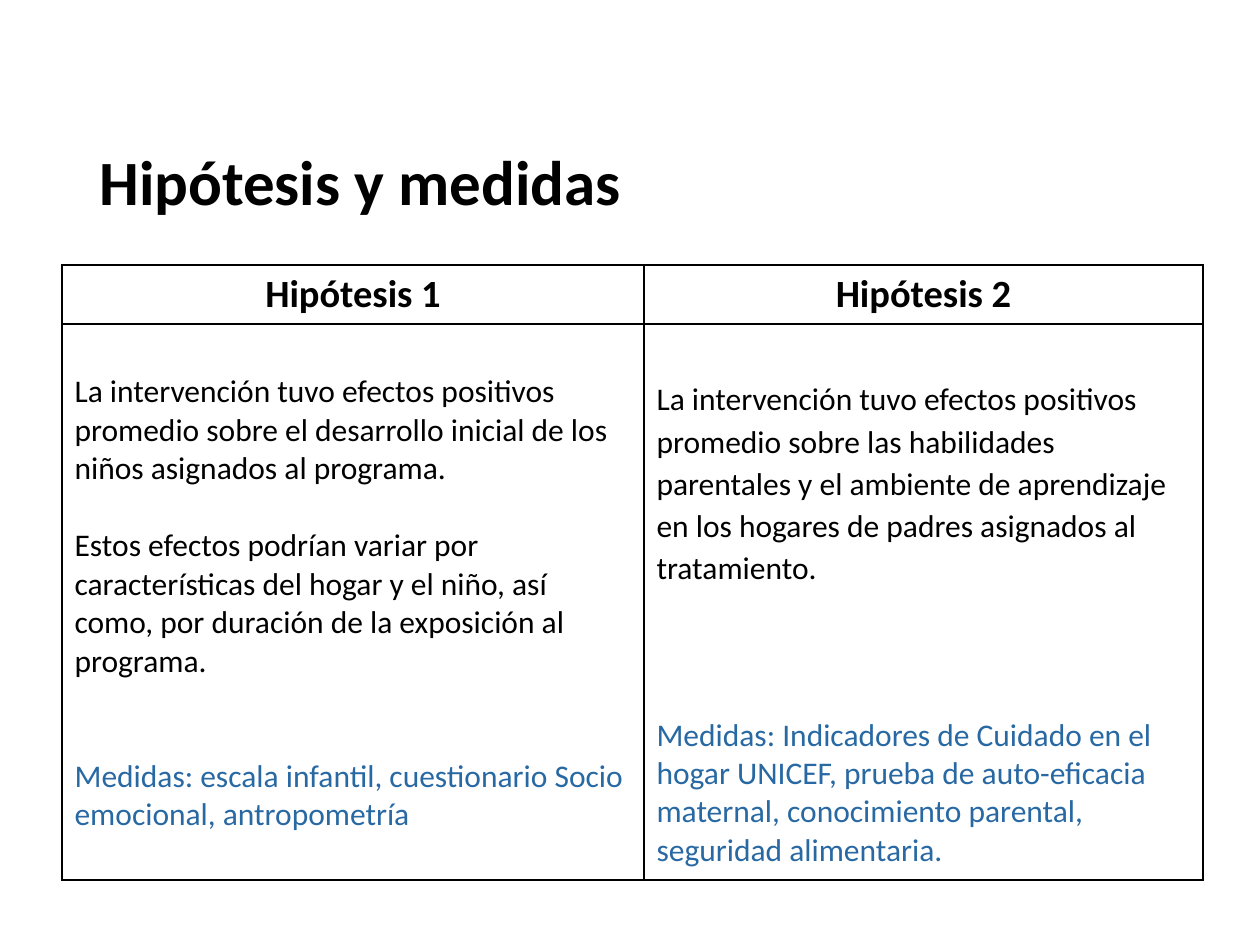
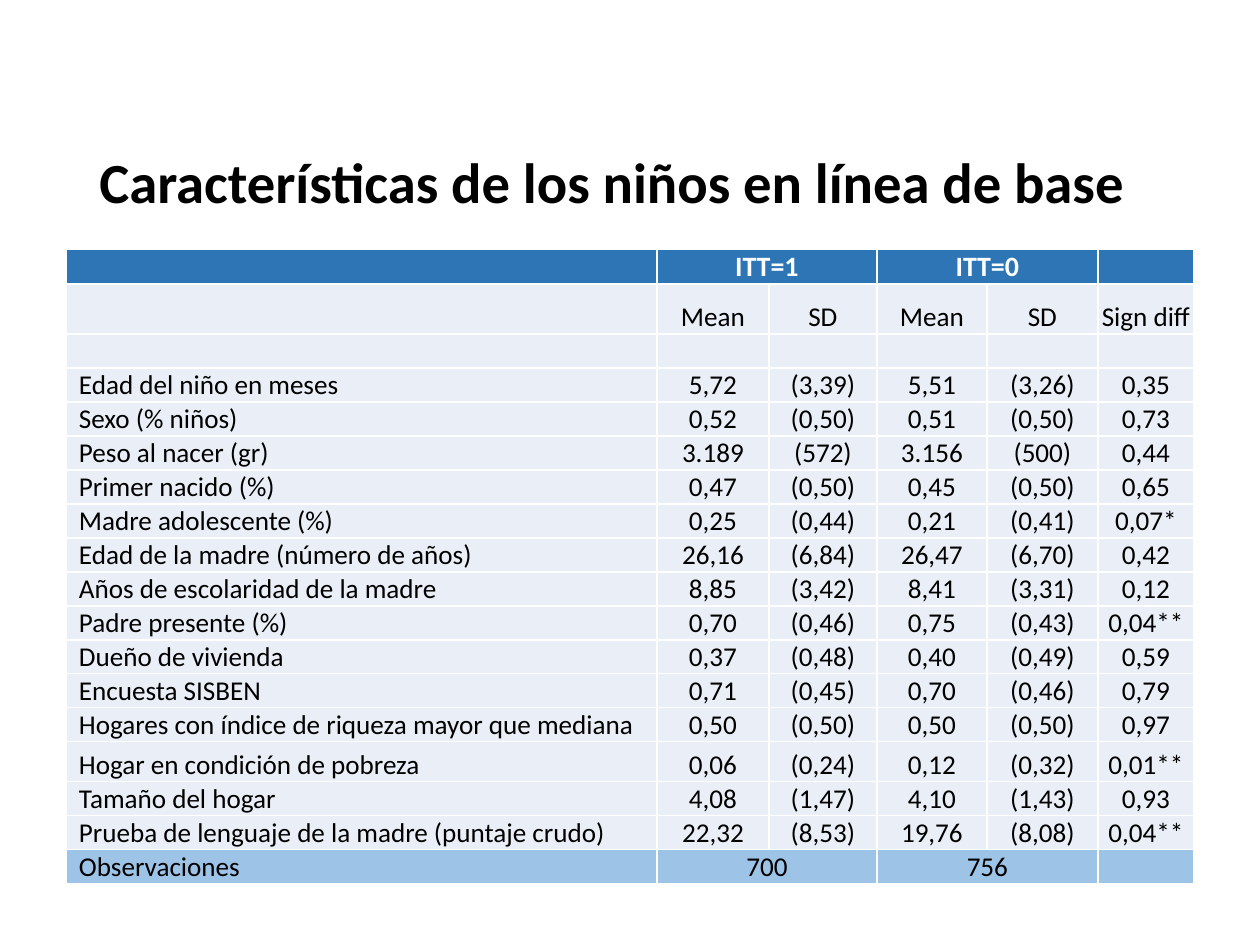
from pptx import Presentation
from pptx import util as u
from pptx.dml.color import RGBColor
from pptx.enum import text
from pptx.oxml.ns import qn
from lxml import etree

BLACK = RGBColor(0x00, 0x00, 0x00)
WHITE = RGBColor(0xFF, 0xFF, 0xFF)
MEASURE_BLUE = RGBColor(0x29, 0x69, 0xA3)
HEADER_BLUE = RGBColor(0x2E, 0x75, 0xB6)
BODY_BLUE = RGBColor(0xEA, 0xEF, 0xF7)
TOTAL_BLUE = RGBColor(0x9D, 0xC3, 0xE6)
FONT = "Calibri"
LEFT, CENTER = text.PP_ALIGN.LEFT, text.PP_ALIGN.CENTER

# Hypotheses: heading, top margin in px, then (text, space before, line spacing, colour)
HYPOTHESES = [
    ("Hipótesis 1", 49, [
        ("La intervención tuvo efectos positivos promedio sobre el desarrollo inicial "
         "de los niños asignados al programa.", 0, 1.0, BLACK),
        ("Estos efectos podrían variar por características del hogar y el niño, así como, "
         "por duración de la exposición al programa.", 22, 1.0, BLACK),
        ("Medidas: escala infantil, cuestionario Socio emocional, antropometría",
         44, 1.0, MEASURE_BLUE),
    ]),
    ("Hipótesis 2", 53, [
        ("La intervención tuvo efectos positivos promedio sobre las habilidades parentales "
         "y el ambiente de aprendizaje en los hogares de padres asignados al tratamiento.",
         0, 1.1, BLACK),
        ("Medidas: Indicadores de Cuidado en el hogar UNICEF, prueba de auto-eficacia "
         "maternal, conocimiento parental, seguridad alimentaria.", 73, 1.0, MEASURE_BLUE),
    ]),
]

# Baseline: label, mean and SD for each group, significance of the difference
BASELINE = [
    ("", "ITT=1", "", "ITT=0", "", ""),
    ("", "Mean", "SD", "Mean", "SD", "Sign diff"),
    ("", "", "", "", "", ""),
    ("Edad del niño en meses", "5,72", "(3,39)", "5,51", "(3,26)", "0,35"),
    ("Sexo (% niños)", "0,52", "(0,50)", "0,51", "(0,50)", "0,73"),
    ("Peso al nacer (gr)", "3.189", "(572)", "3.156", "(500)", "0,44"),
    ("Primer nacido (%)", "0,47", "(0,50)", "0,45", "(0,50)", "0,65"),
    ("Madre adolescente (%)", "0,25", "(0,44)", "0,21", "(0,41)", "0,07*"),
    ("Edad de la madre (número de años)", "26,16", "(6,84)", "26,47", "(6,70)", "0,42"),
    ("Años de escolaridad de la madre", "8,85", "(3,42)", "8,41", "(3,31)", "0,12"),
    ("Padre presente (%)", "0,70", "(0,46)", "0,75", "(0,43)", "0,04**"),
    ("Dueño de vivienda", "0,37", "(0,48)", "0,40", "(0,49)", "0,59"),
    ("Encuesta SISBEN", "0,71", "(0,45)", "0,70", "(0,46)", "0,79"),
    ("Hogares con índice de riqueza mayor que mediana",
     "0,50", "(0,50)", "0,50", "(0,50)", "0,97"),
    ("Hogar en condición de pobreza", "0,06", "(0,24)", "0,12", "(0,32)", "0,01**"),
    ("Tamaño del hogar", "4,08", "(1,47)", "4,10", "(1,43)", "0,93"),
    ("Prueba de lenguaje de la madre (puntaje crudo)",
     "22,32", "(8,53)", "19,76", "(8,08)", "0,04**"),
    ("Observaciones", "700", "", "756", "", ""),
]
LAST = len(BASELINE) - 1
TALL_ROWS = {0: 35, 1: 50, 14: 40}


def px(n):
    return u.Emu(round(n * 914400 / 126))


def style(paragraph, size, color, bold=False, align=LEFT, spacing=1.0, before=0):
    paragraph.alignment = align
    paragraph.line_spacing = spacing
    if before:
        paragraph.space_before = u.Pt(before)
    font = paragraph.font
    font.name, font.size, font.bold = FONT, u.Pt(size), bold
    font.color.rgb = color
    if not paragraph.runs:  # keeps empty cells as low as the filled ones
        paragraph._p.get_or_add_endParaRPr().set("sz", str(round(size * 100)))


def add_titled_slide(prs, title, size):
    slide = prs.slides.add_slide(prs.slide_layouts[6])
    frame = slide.shapes.add_textbox(px(87), px(137), px(1086), px(96)).text_frame
    frame.word_wrap = True
    frame.vertical_anchor = text.MSO_ANCHOR.MIDDLE
    frame.text = title
    style(frame.paragraphs[0], size, BLACK, True, spacing=0.9)
    return slide


def add_grid(slide, left, top, widths, heights, line_color):
    table = slide.shapes.add_table(len(heights), len(widths), px(left), px(top),
                                   px(sum(widths)), px(sum(heights))).table
    table.horz_banding = False
    for column, width in zip(table.columns, widths):
        column.width = px(width)
    for row, height in zip(table.rows, heights):
        row.height = px(height)
    for cell in table.iter_cells():
        properties = cell._tc.get_or_add_tcPr()
        for side in ("a:lnL", "a:lnR", "a:lnT", "a:lnB"):
            line = etree.SubElement(properties, qn(side), w=str(u.Pt(1)))
            fill = etree.SubElement(line, qn("a:solidFill"))
            etree.SubElement(fill, qn("a:srgbClr"), val=str(line_color))
    return table


def build_hypotheses(prs):
    slide = add_titled_slide(prs, "Hipótesis y medidas", 36)
    table = add_grid(slide, 62, 265, [582, 559], [59, 556], BLACK)
    for col, (heading, top_margin, statements) in enumerate(HYPOTHESES):
        head, body = table.cell(0, col), table.cell(1, col)
        head.fill.background()
        body.fill.background()
        head.text = heading
        style(head.text_frame.paragraphs[0], 22, BLACK, True, CENTER)
        body.margin_top = px(top_margin)
        body.text = "\n".join(statement[0] for statement in statements)
        for paragraph, (_, before, spacing, color) in zip(body.text_frame.paragraphs, statements):
            style(paragraph, 18, color, spacing=spacing, before=before)


def build_baseline(prs):
    slide = add_titled_slide(prs, "Características de los niños en línea de base", 32.4)
    heights = [TALL_ROWS.get(row, 34) for row in range(len(BASELINE))]
    table = add_grid(slide, 66, 249, [591, 112, 108, 110, 111, 96], heights, WHITE)
    fills = {0: HEADER_BLUE, LAST: TOTAL_BLUE}
    for row, values in enumerate(BASELINE):
        is_header = row == 0
        for col, value in enumerate(values):
            cell = table.cell(row, col)
            cell.fill.solid()
            cell.fill.fore_color.rgb = fills.get(row, BODY_BLUE)
            cell.vertical_anchor = text.MSO_ANCHOR.BOTTOM
            cell.margin_left = px(1 if col else 13)
            cell.margin_right = cell.margin_top = px(1)
            cell.margin_bottom = 0
            if value:
                cell.text = value
            style(cell.text_frame.paragraphs[0], 16 if is_header else 15.5,
                  WHITE if is_header else BLACK, is_header, CENTER if col else LEFT)
    # Group names and sample sizes span mean and SD
    for row in (0, LAST):
        for col in (1, 3):
            table.cell(row, col).merge(table.cell(row, col + 1))


def main():
    prs = Presentation()
    prs.slide_width, prs.slide_height = px(1260), px(945)
    build_hypotheses(prs)
    build_baseline(prs)
    prs.save("out.pptx")


if __name__ == "__main__":
    main()
